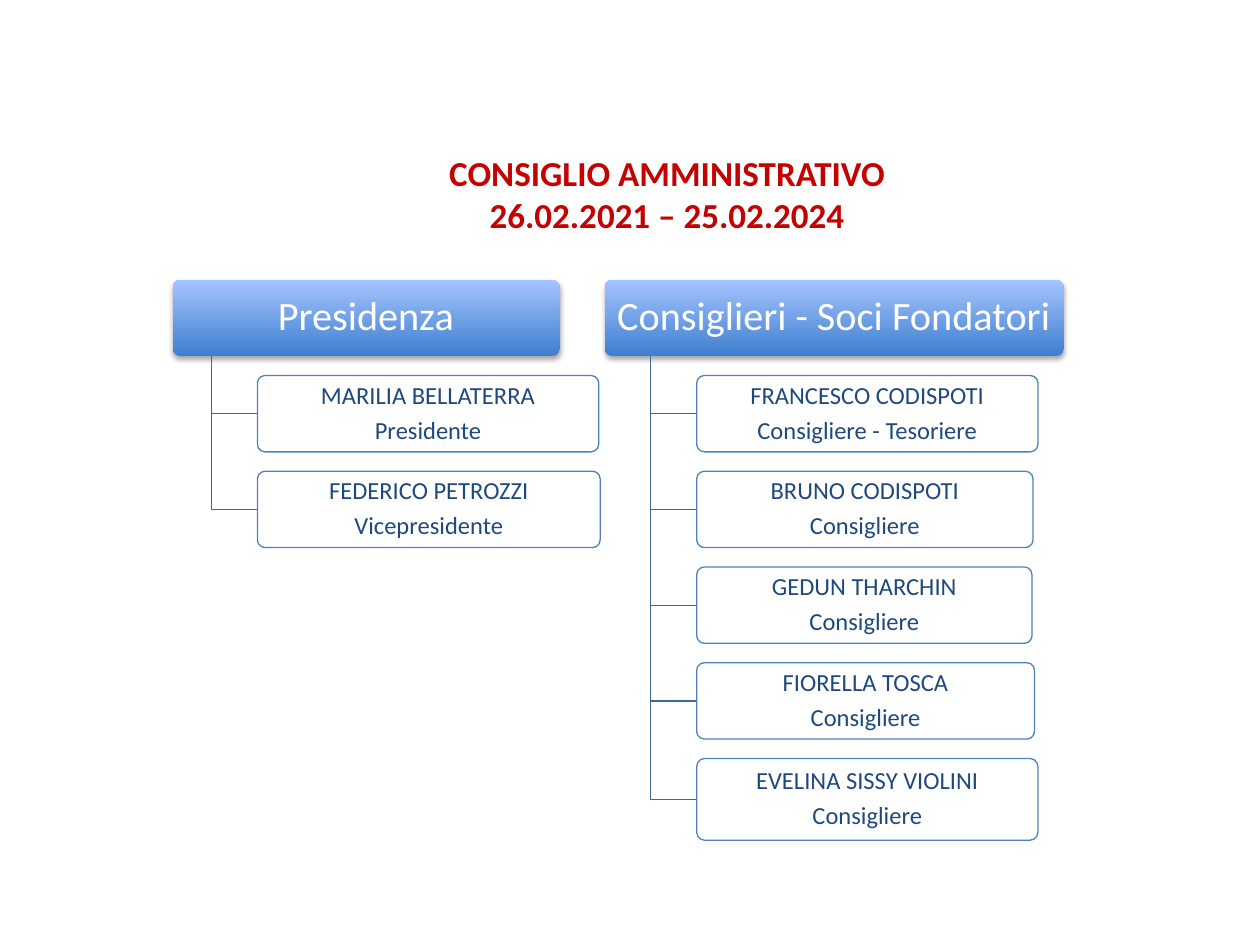
from dataclasses import dataclass

import pptx
import pptx.dml.color
import pptx.enum.shapes
import pptx.enum.text
import pptx.oxml
import pptx.oxml.ns
import pptx.util
from pptx.util import Cm

FONT = "Calibri"
HEAD_TOP = 5.64
BOX_H = 1.54
ROW_PITCH = 1.93
TRUNK_SHARE = 0.1
BRANCH = 0.93


@dataclass
class Member:
    name: str
    role: str
    width: float
    height: float = BOX_H


@dataclass
class Column:
    title: str
    left: float
    width: float
    members: list[Member]


COLUMNS = [
    Column("Presidenza", 3.48, 7.8, [
        Member("MARILIA BELLATERRA", "Presidente", 6.88),
        Member("FEDERICO PETROZZI", "Vicepresidente", 6.91),
    ]),
    Column("Consiglieri - Soci Fondatori", 12.19, 9.25, [
        Member("FRANCESCO CODISPOTI", "Consigliere - Tesoriere", 6.88),
        Member("BRUNO CODISPOTI", "Consigliere", 6.78),
        Member("GEDUN THARCHIN", "Consigliere", 6.76),
        Member("FIORELLA TOSCA", "Consigliere", 6.81),
        Member("EVELINA SISSY VIOLINI", "Consigliere", 6.88, 1.65),
    ]),
]


def rgb(value: str) -> pptx.dml.color.RGBColor:
    return pptx.dml.color.RGBColor.from_string(value)


def apply(target, values: dict) -> None:
    for key, value in values.items():
        setattr(target, key, value)


def write(tf, lines: list[str], color: str, para: dict, font: dict) -> None:
    tf.text = "\n".join(lines)
    for p in tf.paragraphs:
        apply(p, {"alignment": pptx.enum.text.PP_ALIGN.CENTER, **para})
        for r in p.runs:
            apply(r.font, {"name": FONT, **font})
            r.font.color.rgb = rgb(color)


def add_box(s, left: float, top: float, width: float, height: float,
            lines: list[str], size: int, color: str, inset: float):
    sp = s.shapes.add_shape(pptx.enum.shapes.MSO_SHAPE.ROUNDED_RECTANGLE,
                            Cm(left), Cm(top), Cm(width), Cm(height))
    sp.adjustments[0] = 0.1
    sp.shadow.inherit = False
    tf = sp.text_frame
    apply(tf, {"word_wrap": True,
               "vertical_anchor": pptx.enum.text.MSO_ANCHOR.MIDDLE,
               "margin_left": Cm(inset), "margin_right": Cm(inset),
               "margin_top": Cm(0.1), "margin_bottom": Cm(0.1)})
    write(tf, lines, color,
          {"line_spacing": 0.9, "space_after": pptx.util.Pt(0.35 * size)},
          {"size": pptx.util.Pt(size)})
    return sp


def add_head(s, column: Column) -> None:
    sp = add_box(s, column.left, HEAD_TOP, column.width, BOX_H,
                 [column.title], 23, "FFFFFF", 0.15)
    sp.line.fill.background()
    sp.fill.gradient()
    sp.fill.gradient_angle = 90
    for stop, color in zip(sp.fill.gradient_stops, ("3F7FCE", "A4C4FF")):
        stop.color.rgb = rgb(color)
    effects = sp._element.spPr.find(pptx.oxml.ns.qn("a:effectLst"))
    effects.append(pptx.oxml.parse_xml(
        f'<a:outerShdw {pptx.oxml.ns.nsdecls("a")} blurRad="40000" dist="23000" '
        'dir="5400000" rotWithShape="0"><a:srgbClr val="000000">'
        '<a:alpha val="35000"/></a:srgbClr></a:outerShdw>'))


def add_elbow(s, x: float, y: float, end_x: float, end_y: float) -> None:
    builder = s.shapes.build_freeform(Cm(x), Cm(y))
    builder.add_line_segments([(Cm(x), Cm(end_y)), (Cm(end_x), Cm(end_y))], close=False)
    sp = builder.convert_to_shape()
    sp.shadow.inherit = False
    sp.fill.background()
    sp.line.color.rgb = rgb("3F6797")
    sp.line.width = pptx.util.Pt(0.75)


def add_member(s, member: Member, left: float, top: float) -> None:
    sp = add_box(s, left, top, member.width, member.height,
                 [member.name, member.role], 14, "1F497D", 0.08)
    sp.fill.solid()
    sp.fill.fore_color.rgb = rgb("FFFFFF")
    color = sp._element.spPr.find(".//" + pptx.oxml.ns.qn("a:srgbClr"))
    color.append(pptx.oxml.parse_xml(
        f'<a:alpha {pptx.oxml.ns.nsdecls("a")} val="90000"/>'))
    sp.line.color.rgb = rgb("4F81BD")
    sp.line.width = pptx.util.Pt(0.75)


def add_column(s, column: Column) -> None:
    add_head(s, column)
    trunk = column.left + TRUNK_SHARE * column.width
    for row, member in enumerate(column.members, 1):
        top = HEAD_TOP + row * ROW_PITCH
        add_elbow(s, trunk, HEAD_TOP + BOX_H, trunk + BRANCH, top + member.height / 2)
        add_member(s, member, trunk + BRANCH, top)


def add_title(s) -> None:
    sp = s.shapes.title
    apply(sp, {"left": Cm(4.8), "top": Cm(2.92), "width": Cm(17.3), "height": Cm(1.96)})
    tf = sp.text_frame
    apply(tf, {"word_wrap": True,
               "vertical_anchor": pptx.enum.text.MSO_ANCHOR.TOP,
               "auto_size": pptx.enum.text.MSO_AUTO_SIZE.SHAPE_TO_FIT_TEXT})
    write(tf, ["CONSIGLIO AMMINISTRATIVO", "26.02.2021 – 25.02.2024"], "C40202",
          {}, {"size": pptx.util.Pt(20), "bold": True})


def main() -> None:
    prs = pptx.Presentation()
    apply(prs, {"slide_width": Cm(25.4), "slide_height": Cm(19.05)})
    s = prs.slides.add_slide(prs.slide_layouts[5])
    add_title(s)
    for column in COLUMNS:
        add_column(s, column)
    prs.save("out.pptx")


if __name__ == "__main__":
    main()
